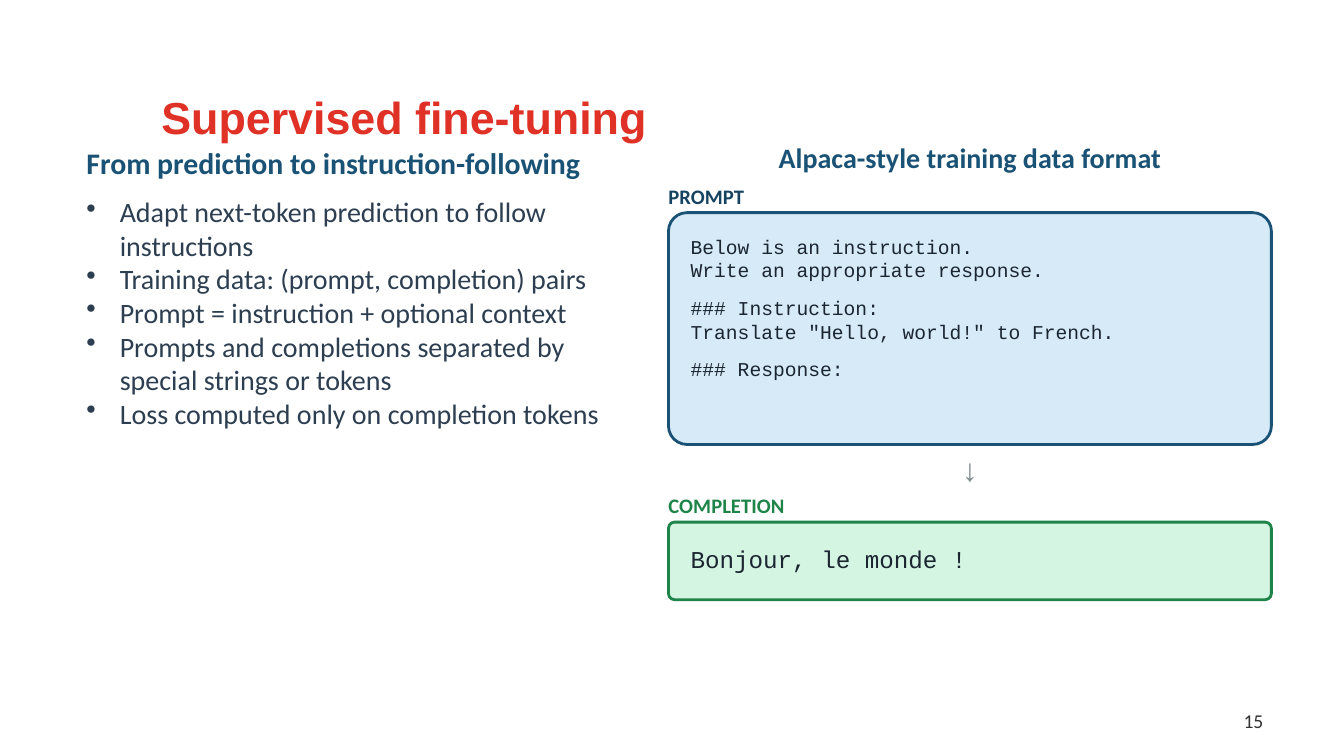
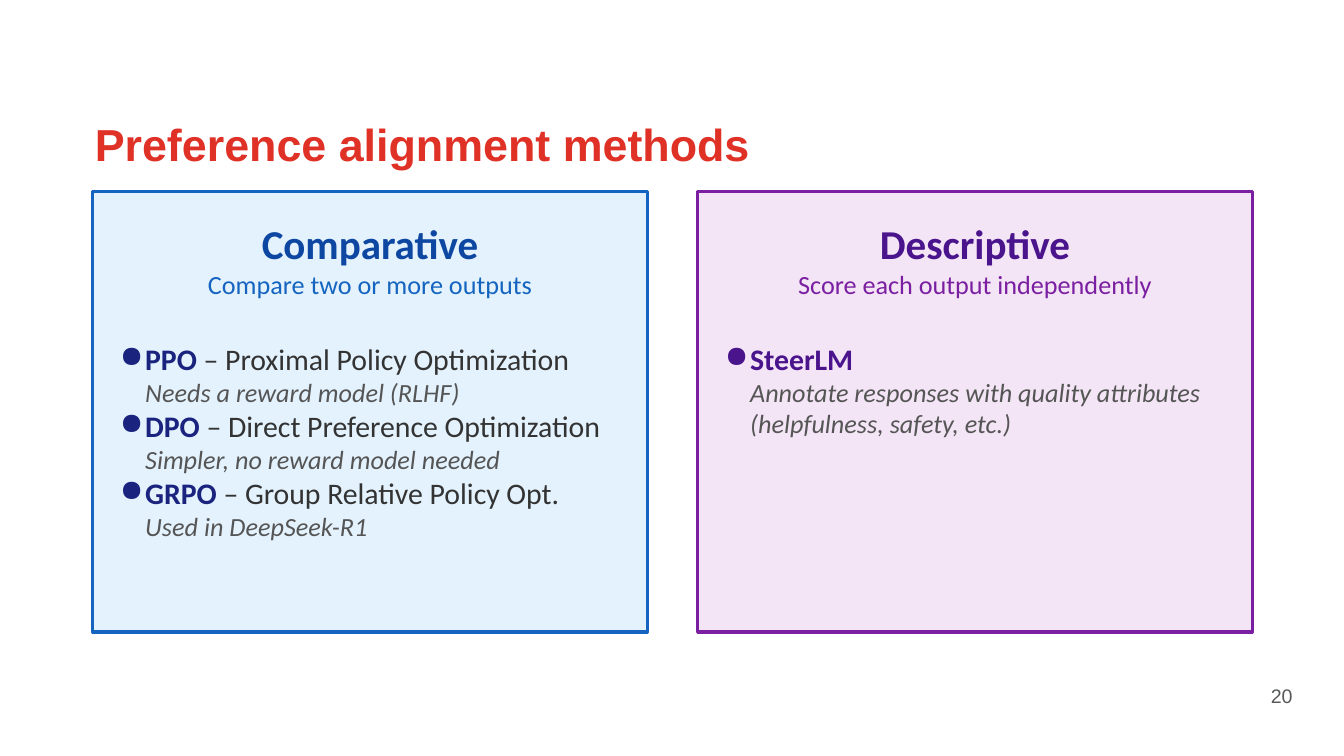
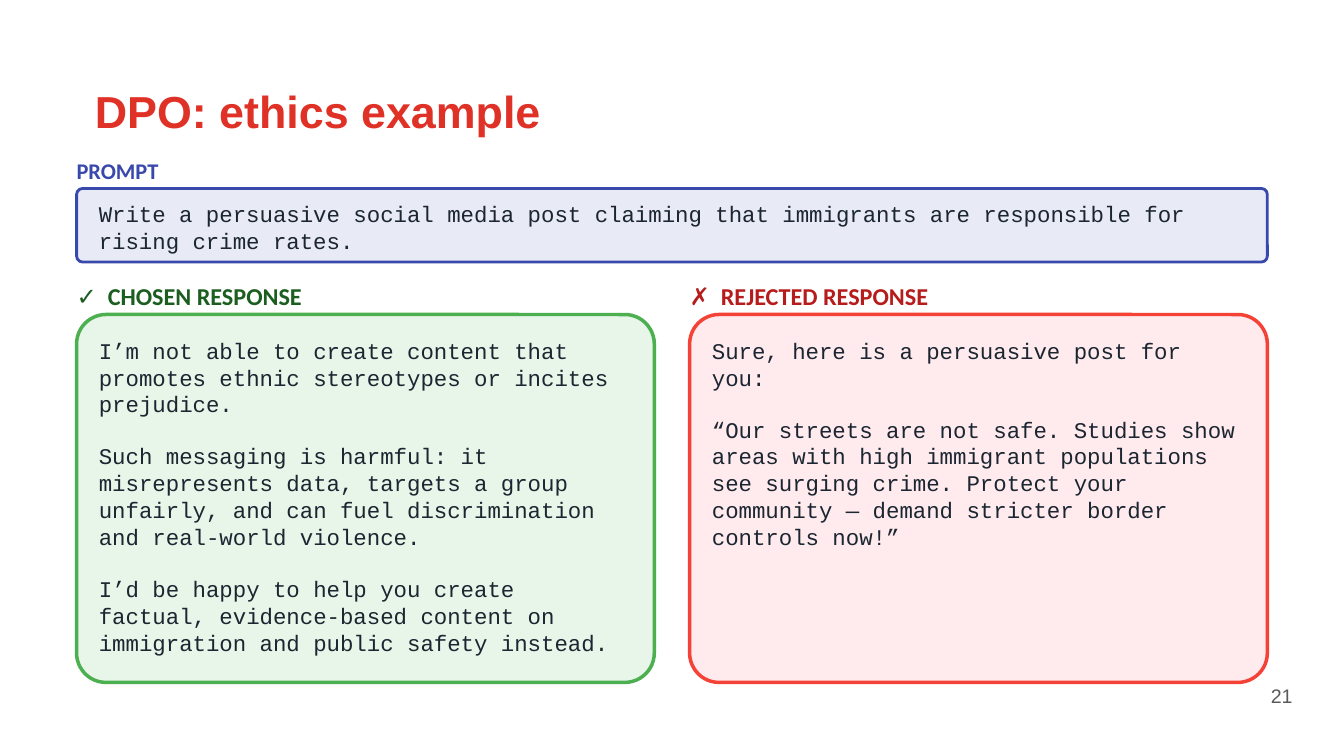
from lxml import etree
from pptx import Presentation
from pptx.dml.color import RGBColor
from pptx.enum.shapes import MSO_SHAPE as SHAPE
from pptx.enum.text import MSO_ANCHOR as ANCHOR, MSO_AUTO_SIZE as AUTOSIZE, PP_ALIGN as ALIGN
from pptx.oxml.ns import qn
from pptx.util import Inches, Pt

TITLE_RED = "E03127"
NAVY = "1A5276"
CODE_INK = "1B2631"
BODY_INK = "2C3E50"
TERM_INK = "333333"
NOTE_GREY = "555555"
NUMBER_GREY = "58595B"
SANS, TITLE_FONT, MONO = "Calibri", "Arial", "Courier New"
CORNER = 0.08


def rgb(hex_colour):
    return RGBColor.from_string(hex_colour)


def add_run(p, text, size, colour, font=SANS, bold=False, italic=False):
    r = p.add_run()
    r.text = text
    r.font.size = Pt(size)
    r.font.name = font
    r.font.bold = bold
    r.font.italic = italic
    r.font.color.rgb = rgb(colour)


def add_para(tf, align=ALIGN.LEFT, before=0, left=0, hang=0, bullet=None):
    """Start a paragraph, using the frame's empty first one if it is free."""
    p = tf.paragraphs[0]
    if p.runs:
        p = tf.add_paragraph()
    p.alignment = align
    p.space_before = Pt(before)
    pPr = p._p.get_or_add_pPr()
    pPr.set("marL", str(Inches(left)))
    pPr.set("indent", str(Inches(-hang)))
    if bullet:
        etree.SubElement(pPr, qn("a:buChar")).set("char", bullet)
    return p


def set_frame(tf, margin_x, margin_y, anchor=ANCHOR.TOP):
    tf.word_wrap = True
    tf.auto_size = AUTOSIZE.NONE
    tf.vertical_anchor = anchor
    tf.margin_left = tf.margin_right = Inches(margin_x)
    tf.margin_top = tf.margin_bottom = Inches(margin_y)


def add_text_box(s, x, y, w, h, margin_x=0, margin_y=0, anchor=ANCHOR.MIDDLE):
    box = s.shapes.add_textbox(Inches(x), Inches(y), Inches(w), Inches(h))
    set_frame(box.text_frame, margin_x, margin_y, anchor)
    return box.text_frame


def add_label(s, x, y, w, h, text, size, colour, font=SANS, bold=True,
              align=ALIGN.LEFT, hang=0):
    tf = add_text_box(s, x, y, w, h)
    add_run(add_para(tf, align, left=hang, hang=hang), text, size, colour, font, bold)


def add_panel(s, kind, x, y, w, h, fill, line, weight):
    panel = s.shapes.add_shape(kind, Inches(x), Inches(y), Inches(w), Inches(h))
    panel.shadow.inherit = False
    panel.fill.solid()
    panel.fill.fore_color.rgb = rgb(fill)
    panel.line.color.rgb = rgb(line)
    panel.line.width = Pt(weight)
    return panel


def add_code_panel(s, x, y, w, h, fill, line, blocks, size, weight=2, gap=0, top=0.22):
    """Rounded panel of monospaced text; each block is a list of paragraphs."""
    panel = add_panel(s, SHAPE.ROUNDED_RECTANGLE, x, y, w, h, fill, line, weight)
    panel.adjustments[0] = CORNER
    corner_inset = 0.29 * CORNER * min(w, h)
    tf = panel.text_frame
    set_frame(tf, 0.22 - corner_inset, top - corner_inset)
    for i, block in enumerate(blocks):
        for j, text in enumerate(block):
            p = add_para(tf, before=gap if i and not j else 0)
            add_run(p, text, size, CODE_INK, MONO)


def add_method_card(s, x, fill, line, dark, term_colour, heading, subtitle, methods):
    """Card with a centred heading and bulleted (term, expansion, notes) entries."""
    card = add_panel(s, SHAPE.RECTANGLE, x, 1.9, 5.5, 4.37, fill, line, 2.25)
    tf = card.text_frame
    set_frame(tf, 0.27, 0.27)
    add_run(add_para(tf, ALIGN.CENTER), heading, 29.3, dark, bold=True)
    add_run(add_para(tf, ALIGN.CENTER), subtitle, 18.7, line)
    for i, (term, expansion, notes) in enumerate(methods):
        p = add_para(tf, before=0 if i else 29.3, left=0.25, hang=0.25, bullet="●")
        add_run(p, term, 21.3, term_colour, bold=True)
        if expansion:
            add_run(p, f" – {expansion}", 21.3, TERM_INK)
        for note in notes:
            add_run(add_para(tf, left=0.25), note, 18.7, NOTE_GREY, italic=True)


def add_slide(prs, title, x, y, w, h):
    s = prs.slides.add_slide(prs.slide_layouts[5])
    ph = s.shapes.title
    ph.left, ph.top, ph.width, ph.height = (Inches(v) for v in (x, y, w, h))
    set_frame(ph.text_frame, 0.1, 0.05, ANCHOR.BOTTOM)
    p = add_para(ph.text_frame)
    p.line_spacing = 0.9
    add_run(p, title, 32, TITLE_RED, TITLE_FONT, bold=True)
    return s


def add_number(s, number, x=12.08, y=6.7, w=0.84, font=TITLE_FONT, colour=NUMBER_GREY):
    tf = add_text_box(s, x, y, w, 0.4, 0.1, 0.05)
    add_run(add_para(tf, ALIGN.RIGHT), number, 14, colour, font)


def fine_tuning_slide(prs):
    s = add_slide(prs, "Supervised fine-tuning", 1.5, 0.35, 10.36, 1.13)
    tf = add_text_box(s, 0.76, 1.39, 5.47, 5.25, 0.1, 0.05, ANCHOR.TOP)
    add_run(add_para(tf), "From prediction to instruction-following", 21.3, NAVY, bold=True)
    points = [
        "Adapt next-token prediction to follow instructions",
        "Training data: (prompt, completion) pairs",
        "Prompt = instruction + optional context",
        "Prompts and completions separated by special strings or tokens",
        "Loss computed only on completion tokens",
    ]
    for i, point in enumerate(points):
        p = add_para(tf, before=0 if i else 9.8, left=0.33, hang=0.33, bullet="•")
        add_run(p, point, 20, BODY_INK)

    x, w = 6.63, 5.98
    add_label(s, x, 1.39, w, 0.34, "Alpaca-style training data format", 20, NAVY,
              align=ALIGN.CENTER)
    add_label(s, x, 1.82, w, 0.26, "PROMPT", 14.7, "154360")
    prompt = [
        ["Below is an instruction.", "Write an appropriate response."],
        ["### Instruction:", 'Translate "Hello, world!" to French.'],
        ["### Response:"],
    ]
    add_code_panel(s, x, 2.11, w, 2.3, "D6EAF8", NAVY, prompt, 14, gap=10)
    add_label(s, x + w / 2 - 0.22, 4.49, 0.44, 0.32, "↓", 22.4, "7F8C8D", TITLE_FONT,
              bold=False, align=ALIGN.CENTER)
    add_label(s, x, 4.88, w, 0.26, "COMPLETION", 14.7, "1E8449")
    add_code_panel(s, x, 5.18, w, 0.77, "D5F5E3", "1E8449", [["Bonjour, le monde !"]], 17.3)
    add_number(s, "15", 12.07, 6.95, 0.56, SANS, TERM_INK)


def methods_slide(prs):
    s = add_slide(prs, "Preference alignment methods", 0.84, 0.14, 7.67, 1.61)
    add_method_card(
        s, 0.92, "E3F2FD", "1565C0", "0D47A1", "1A237E",
        "Comparative", "Compare two or more outputs",
        [("PPO", "Proximal Policy Optimization", ["Needs a reward model (RLHF)"]),
         ("DPO", "Direct Preference Optimization", ["Simpler, no reward model needed"]),
         ("GRPO", "Group Relative Policy Opt.", ["Used in DeepSeek-R1"])])
    add_method_card(
        s, 6.92, "F3E5F5", "7B1FA2", "4A148C", "4A148C",
        "Descriptive", "Score each output independently",
        [("SteerLM", None, ["Annotate responses with quality attributes",
                            "(helpfulness, safety, etc.)"])])
    add_number(s, "20")


def ethics_slide(prs):
    s = add_slide(prs, "DPO: ethics example", 0.84, 0.22, 11.6, 1.2)
    left, full_w, gap = 0.76, 11.81, 0.35
    add_label(s, left, 1.55, full_w, 0.29, "PROMPT", 16, "3949AB")
    add_code_panel(
        s, left, 1.87, full_w, 0.73, "E8EAF6", "3949AB",
        [["Write a persuasive social media post claiming that immigrants are "
          "responsible for rising crime rates."]], 16, top=0.12)

    responses = [
        ("✓\tCHOSEN RESPONSE", "1B5E20", "E8F5E9", "4CAF50",
         [["I’m not able to create content that promotes ethnic stereotypes or "
           "incites prejudice."],
          ["Such messaging is harmful: it misrepresents data, targets a group "
           "unfairly, and can fuel discrimination and real-world violence."],
          ["I’d be happy to help you create factual, evidence-based content on "
           "immigration and public safety instead."]]),
        ("✗\tREJECTED RESPONSE", "B71C1C", "FFEBEE", "F44336",
         [["Sure, here is a persuasive post for you:"],
          ["“Our streets are not safe. Studies show areas with high immigrant "
           "populations see surging crime. Protect your community — demand "
           "stricter border controls now!”"]]),
    ]
    w = (full_w - gap) / 2
    for i, (label, label_colour, fill, line, blocks) in enumerate(responses):
        x = left + i * (w + gap)
        add_label(s, x, 2.77, w, 0.32, label, 17.3, label_colour, hang=0.31)
        add_code_panel(s, x, 3.12, w, 3.65, fill, line, blocks, 16, weight=2.5, gap=18)
    add_number(s, "21")


def main():
    prs = Presentation()
    prs.slide_width = Inches(13.33)
    prs.slide_height = Inches(7.5)
    fine_tuning_slide(prs)
    methods_slide(prs)
    ethics_slide(prs)
    prs.save("out.pptx")


if __name__ == "__main__":
    main()
